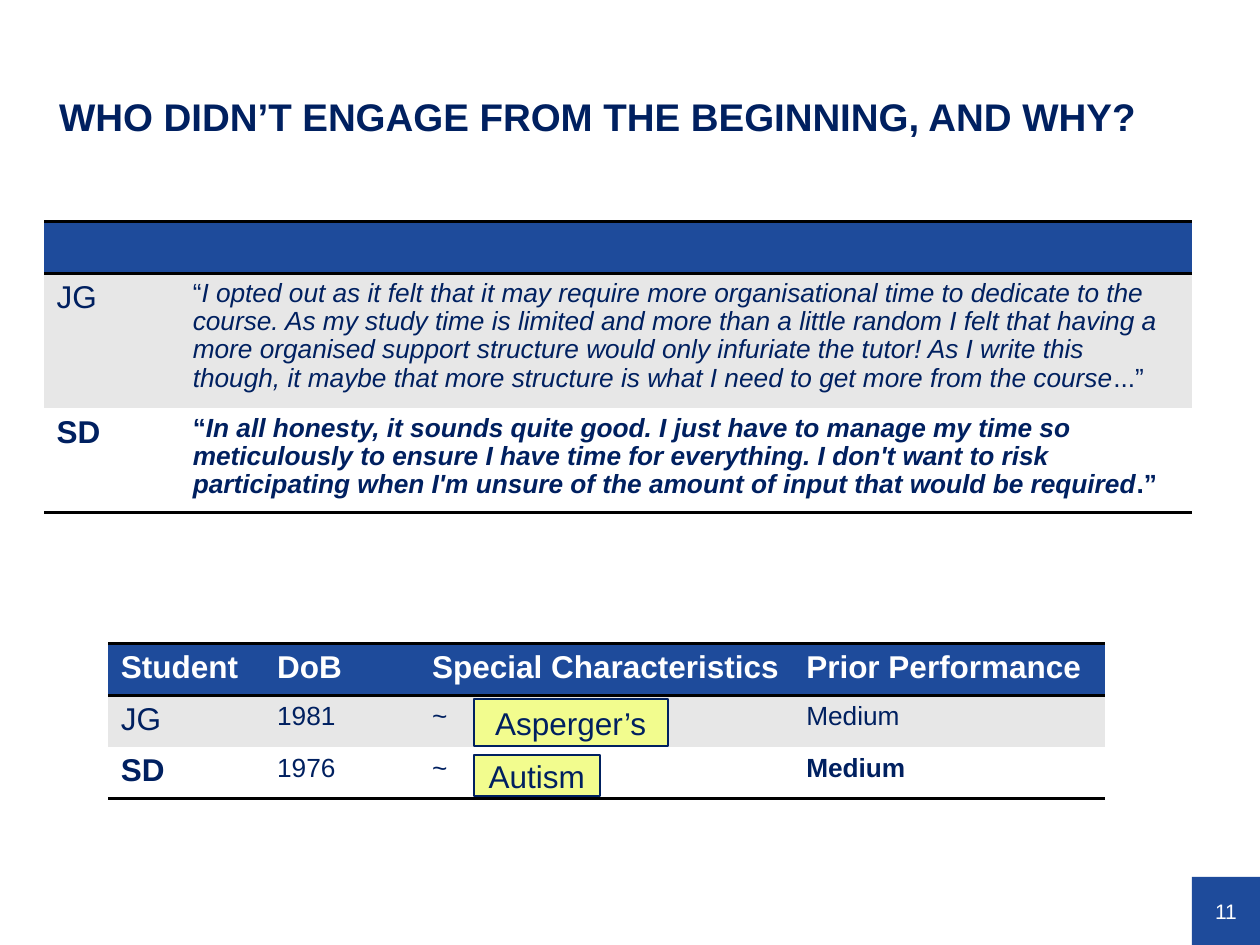
from lxml.etree import SubElement
from pptx import Presentation
from pptx.dml.color import RGBColor
from pptx.enum.shapes import MSO_SHAPE
from pptx.enum.text import MSO_ANCHOR, PP_ALIGN
from pptx.oxml.ns import qn
from pptx.util import Inches, Pt

COLORS = {"navy": "002060", "blue": "1E4B9B", "grey": "E7E7E7",
          "white": "FFFFFF", "black": "000000", "yellow": "F2FC8E"}

deck = Presentation()
deck.slide_width, deck.slide_height = Inches(10), Inches(7.5)
slide = deck.slides.add_slide(deck.slide_layouts[6])
COL = deck.slide_width / 100
ROW = deck.slide_height / 75


def grid(left, top, width, height):
    """Turn grid columns and rows into slide lengths."""
    return int(left * COL), int(top * ROW), int(width * COL), int(height * ROW)


def write(frame, *parts, size=18, color="navy", bold=False, align=None, spacing=None):
    """Fill one paragraph; every second part is italic."""
    paragraph = frame.paragraphs[0]
    paragraph.alignment = align
    paragraph.line_spacing = spacing
    for number, part in enumerate(parts):
        run = paragraph.add_run()
        run.text = part
        run.font.name = "Arial"
        run.font.size = Pt(size)
        run.font.bold = bold
        run.font.italic = number % 2 == 1
        run.font.color.rgb = RGBColor.from_string(COLORS[color])


# Title
title = slide.shapes.add_textbox(*grid(4.3, 7.6, 91.6, 3.5)).text_frame
title.word_wrap = True
title.vertical_anchor = MSO_ANCHOR.MIDDLE
title.margin_left, title.margin_top = Inches(0.04), Inches(0.02)
title.margin_right = title.margin_bottom = 0
write(title, "WHO DIDN’T ENGAGE FROM THE BEGINNING, AND WHY?",
      size=22, bold=True, spacing=0.9)

# Tables: each cell is a tuple of text parts
quotes = [
    [(), ()],
    [("JG",),
     ("“", "I opted out as it felt that it may require more organisational time to "
      "dedicate to the course. As my study time is limited and more than a little "
      "random I felt that having a more organised support structure would only "
      "infuriate the tutor! As I write this though, it maybe that more structure is "
      "what I need to get more from the course", "...”")],
    [("SD",),
     ("“", "In all honesty, it sounds quite good. I just have to manage my time so "
      "meticulously to ensure I have time for everything. I don't want to risk "
      "participating when I'm unsure of the amount of input that would be required",
      ".”")],
]
students = [
    [("Student",), ("DoB",), ("Special Characteristics",), ("Prior Performance",)],
    [("JG",), ("1981",), ("~",), ("Medium",)],
    [("SD",), ("1976",), ("~",), ("Medium",)],
]
tables = [
    (quotes, 3.5, 17.6, [10.8, 80.3], [4.1, 10.3, 8]),
    (students, 8.6, 51.1, [12.4, 12.3, 29.7, 24.7], [4.1, 4.1, 4.1]),
]
row_fills = ["blue", "grey", "white"]
row_rules = [("lnT", "lnB"), ("lnT",), ("lnB",)]

for content, left, top, widths, heights in tables:
    table = slide.shapes.add_table(
        len(heights), len(widths), *grid(left, top, sum(widths), sum(heights))).table
    table.horz_banding = False
    for column, width in zip(table.columns, widths):
        column.width = int(width * COL)
    for r, height in enumerate(heights):
        table.rows[r].height = int(height * ROW)
        for c, parts in enumerate(content[r]):
            cell = table.cell(r, c)
            properties = cell._tc.get_or_add_tcPr()
            for side in ("lnL", "lnR", "lnT", "lnB"):
                border = SubElement(properties, qn(f"a:{side}"), w=str(Pt(2)))
                if side in row_rules[r]:
                    fill = SubElement(border, qn("a:solidFill"))
                    SubElement(fill, qn("a:srgbClr"), val=COLORS["black"])
                else:
                    SubElement(border, qn("a:noFill"))
            cell.fill.solid()
            cell.fill.fore_color.rgb = RGBColor.from_string(COLORS[row_fills[r]])
            plain = parts in [("1976",), ("~",)]
            write(cell.text_frame, *parts,
                  size=18 if r == 0 or c == 0 else 15,
                  color="white" if r == 0 else "navy",
                  bold=r == 0 or (r == 2 and not plain),
                  spacing=0.97 if len(parts) > 1 else None)

# Condition labels and page number
boxes = [
    ("Autism", grid(37.6, 59.9, 10, 3.3), "yellow", "navy", 18),
    ("Asperger’s", grid(37.6, 55.5, 15.4, 3.7), "yellow", "navy", 18),
    ("11", grid(94.6, 69.6, 5.4, 5.4), "blue", "white", 12),
]
for label, area, fill, color, size in boxes:
    box = slide.shapes.add_shape(MSO_SHAPE.RECTANGLE, *area)
    box.shadow.inherit = False
    box.fill.solid()
    box.fill.fore_color.rgb = RGBColor.from_string(COLORS[fill])
    if fill == "yellow":
        box.line.color.rgb = RGBColor.from_string(COLORS["navy"])
        box.line.width = Pt(1)
    else:
        box.line.fill.background()
    box.text_frame.vertical_anchor = MSO_ANCHOR.MIDDLE
    write(box.text_frame, label, size=size, color=color, align=PP_ALIGN.CENTER)

deck.save("out.pptx")
